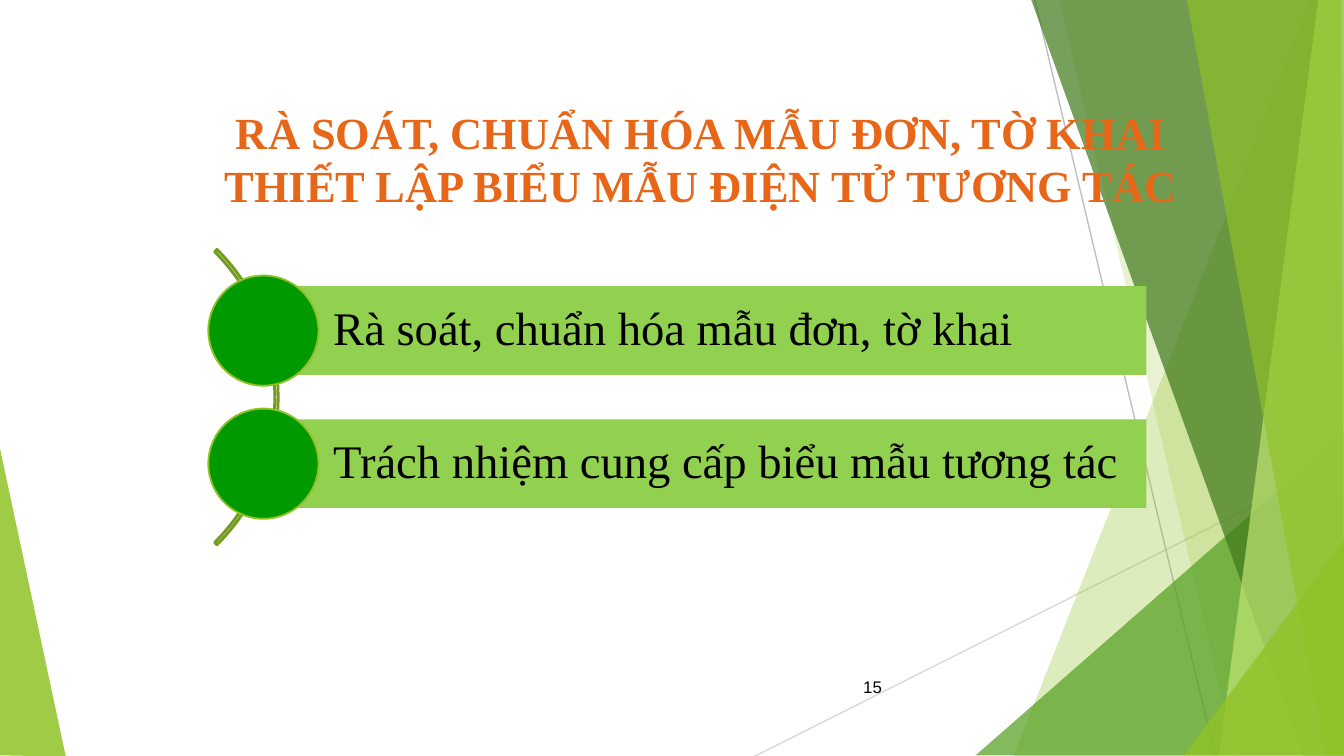
from pptx import Presentation
from pptx.dml.color import RGBColor
from pptx.enum.shapes import MSO_CONNECTOR, MSO_SHAPE as Preset
from pptx.enum.text import MSO_ANCHOR as Anchor, PP_ALIGN as Align
from pptx.oxml.ns import qn
from pptx.util import Inches, Pt
from lxml import etree

WIDTH = 10
HEIGHT = WIDTH * 9 / 16
SERIF = "Times New Roman"
COLORS = {
    "lime": "90C226", "green": "54A021", "forest": "3F7819", "pale": "C0E474",
    "arc": "739B1E", "bar": "92D050", "dot": "009900", "title": "E76618",
    "text": "000000", "line": "D9D9D9", "steep line": "BFBFBF",
}
LEFT_FACET = ([(-0.01, 3.29), (0.49, 5.63), (-0.01, 5.62)], "lime", 85)
RIGHT_FACETS = [
    ([(9.75, 0), (7.54, 5.63), (10.02, 5.63), (10.01, 0.01)], "lime", 30),
    ([(7.88, -0.01), (9.19, 5.62), (10.01, 5.62), (10.01, -0.01)], "lime", 20),
    ([(7.26, 5.62), (10, 3.22), (10.01, 5.62)], "green", 72),
    ([(7.67, -0.01), (9.7, 5.62), (10.01, 5.62), (10.01, -0.01)], "forest", 70),
    ([(9.81, -0.01), (9.07, 5.62), (10.01, 5.62), (10, -0.01)], "pale", 70),
    ([(8.83, -0.01), (9.86, 5.62), (10, 5.62), (9.98, -0.01)], "lime", 65),
    ([(8.81, 5.62), (10.01, 4.01), (10.01, 5.62)], "lime", 80),
]
TOPICS = ["Rà soát, chuẩn hóa mẫu đơn, tờ khai",
          "Trách nhiệm cung cấp biểu mẫu tương tác"]


def color(name):
    return RGBColor.from_string(COLORS[name])


def style(shape, fill=None, line=None, line_width=1):
    shape.shadow.inherit = False
    if fill:
        shape.fill.solid()
        shape.fill.fore_color.rgb = color(fill)
    else:
        shape.fill.background()
    if line:
        shape.line.color.rgb = color(line)
        shape.line.width = Pt(line_width)
    else:
        shape.line.fill.background()


def add_facet(page, points, fill, opacity):
    """Draw a translucent polygon; opacity is in percent."""
    corners = [(Inches(x), Inches(y)) for x, y in points]
    builder = page.shapes.build_freeform(*corners[0])
    builder.add_line_segments(corners[1:], close=True)
    facet = builder.convert_to_shape()
    style(facet, fill)
    for tint in facet.element.spPr.iter(qn("a:srgbClr")):
        etree.SubElement(tint, qn("a:alpha"), val=str(opacity * 1000))


def add_line(page, start, end, name):
    ends = [Inches(value) for value in (*start, *end)]
    line = page.shapes.add_connector(MSO_CONNECTOR.STRAIGHT, *ends)
    line.line.color.rgb = color(name)
    line.line.width = Pt(0.75)
    etree.SubElement(line.element.spPr, qn("a:effectLst"))


def add_preset(page, preset, left, top, width, height, **look):
    shape = page.shapes.add_shape(
        preset, Inches(left), Inches(top), Inches(width), Inches(height))
    style(shape, **look)
    return shape


def write(shape, text, size, font=SERIF, ink="text", align=Align.LEFT,
          anchor=Anchor.MIDDLE, bold=False):
    frame = shape.text_frame
    frame.word_wrap = True
    frame.vertical_anchor = anchor
    frame.text = text
    para = frame.paragraphs[0]
    para.alignment = align
    span = para.runs[0]
    span.font.name = font
    span.font.size = Pt(size)
    span.font.bold = bold
    span.font.color.rgb = color(ink)
    return frame


def add_text(page, left, top, width, height, text, size, **look):
    box = page.shapes.add_textbox(
        Inches(left), Inches(top), Inches(width), Inches(height))
    write(box, text, size, **look)


def add_background(page):
    add_facet(page, *LEFT_FACET)
    add_line(page, (5.61, 5.63), (10.01, 3.42), "line")
    add_line(page, (7.7, 0), (9.04, 5.62), "steep line")
    for facet in RIGHT_FACETS:
        add_facet(page, *facet)


def add_topic(page, text, middle):
    """Draw a bar with its dot, both centred on the height middle."""
    bar_height, dot_size = 0.66, 0.82
    bar = add_preset(page, Preset.RECTANGLE, 1.96, middle - bar_height / 2,
                     6.57, bar_height, fill="bar")
    frame = write(bar, text, 25)
    frame.margin_left = Inches(0.52)
    frame.margin_top = frame.margin_right = frame.margin_bottom = Inches(0.07)
    frame.paragraphs[0].line_spacing = 0.9
    add_preset(page, Preset.OVAL, 1.55, middle - dot_size / 2,
               dot_size, dot_size, fill="dot", line="lime")


def add_topics(page):
    arc = add_preset(page, Preset.BLOCK_ARC, -1.04, 1.4, 3.11, 3.11,
                     line="arc", line_width=1.5)
    for index, value in enumerate((189, 27, 0.008)):
        arc.adjustments[index] = value
    for index, text in enumerate(TOPICS):
        add_topic(page, text, 2.46 + 0.99 * index)


def main():
    deck = Presentation()
    deck.slide_width, deck.slide_height = Inches(WIDTH), Inches(HEIGHT)
    page = deck.slides.add_slide(deck.slide_layouts[6])
    add_background(page)
    add_topics(page)
    add_text(page, 5.91, 4.96, 0.75, 0.3, "15", 9, font="Arial",
             align=Align.RIGHT)
    add_text(page, 1.17, 0.73, 8.08, 0.79,
             "RÀ SOÁT, CHUẨN HÓA MẪU ĐƠN, TỜ KHAI "
             "THIẾT LẬP BIỂU MẪU ĐIỆN TỬ TƯƠNG TÁC", 23.8,
             ink="title", align=Align.CENTER, anchor=Anchor.TOP, bold=True)
    deck.save("out.pptx")


if __name__ == "__main__":
    main()
